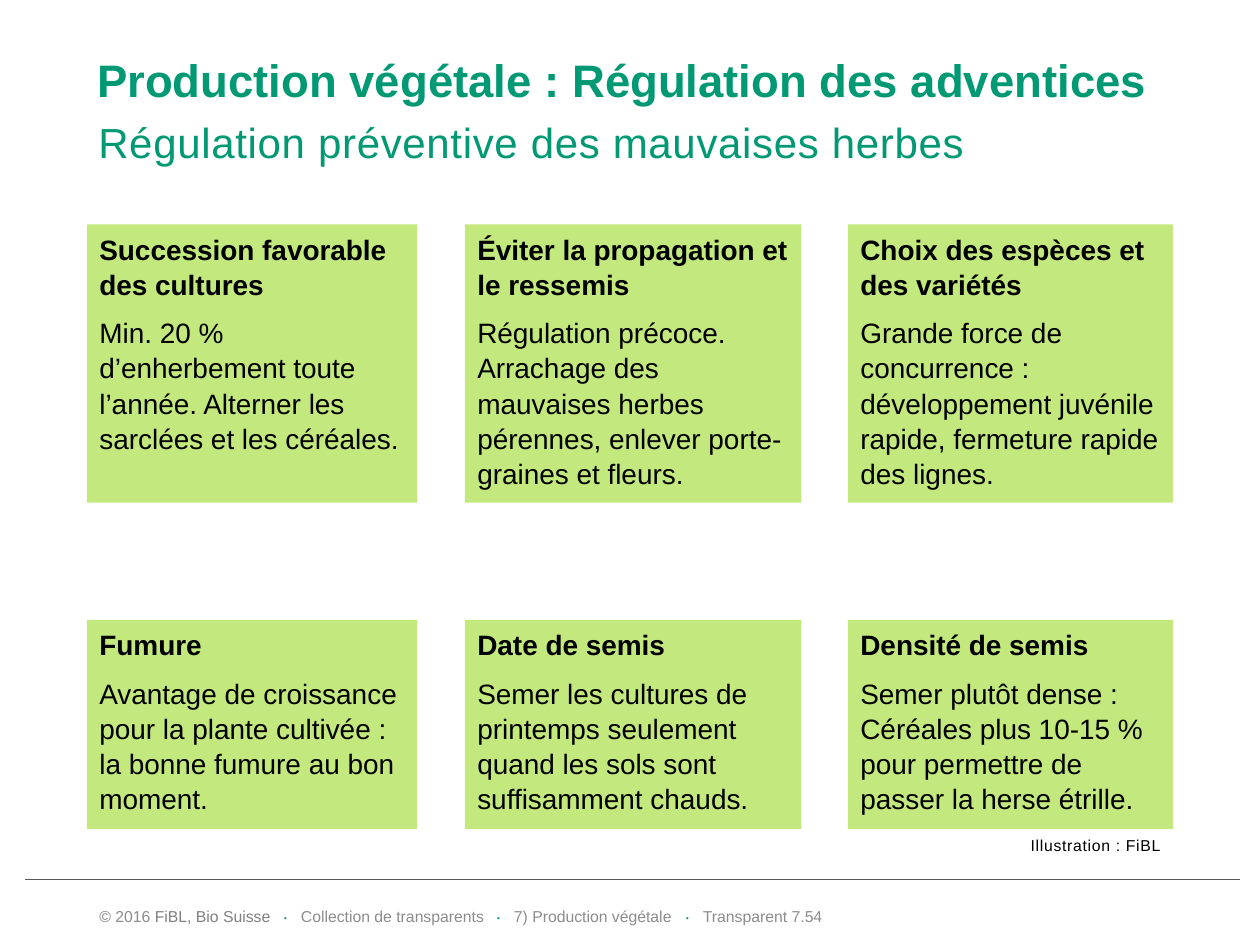
from lxml.etree import SubElement
from pptx import Presentation
from pptx.dml.color import RGBColor
from pptx.enum.shapes import MSO_CONNECTOR, MSO_SHAPE
from pptx.enum.text import MSO_ANCHOR as Anchor, MSO_AUTO_SIZE as AutoSize, PP_ALIGN as Align
from pptx.oxml.ns import qn
from pptx.util import Inches, Pt

GREEN, BLACK, GREY, LIGHT_GREY = "009973", "000000", "808080", "8C8C8C"
BOX_FILL, BULLET, RULE = "C2E87E", "008C7F", "595959"

# Columns: left, width
COLUMNS = [(0.69, 2.62), (3.69, 2.67), (6.73, 2.58)]
# Rows: top, height, cards from left to right
ROWS = [
    (1.78, 2.21, [
        ("Succession favorable des cultures",
         "Min. 20 % d’enherbement toute l’année. Alterner les sarclées et les céréales."),
        ("Éviter la propagation et le ressemis",
         "Régulation précoce. Arrachage des mauvaises herbes pérennes, "
         "enlever porte-graines et fleurs."),
        ("Choix des espèces et des variétés",
         "Grande force de concurrence : développement juvénile rapide, "
         "fermeture rapide des lignes."),
    ]),
    (4.92, 1.66, [
        ("Fumure",
         "Avantage de croissance pour la plante cultivée : la bonne fumure au bon moment."),
        ("Date de semis",
         "Semer les cultures de printemps seulement quand les sols sont suffisamment chauds."),
        ("Densité de semis",
         "Semer plutôt dense : Céréales plus 10-15 % pour permettre de passer la herse étrille."),
    ]),
]
# Footer sections after the copyright: text, tab position
SECTIONS = [("Collection de transparents", 1.6),
            ("7) Production végétale", 3.29),
            ("Transparent 7.54", 4.79)]
BULLET_GAP = 0.14


def colour(value):
    return RGBColor.from_string(value)


def style(font, size, value, bold=False, name="Arial"):
    font.size, font.bold, font.name = Pt(size), bold, name
    font.color.rgb = colour(value)


def fill_placeholder(shape, place, text, size, value, bold=False,
                     anchor=Anchor.TOP, align=Align.LEFT, line=1.0, spacing=0):
    """Move a placeholder and set its text; spacing is in hundredths of a point."""
    shape.left, shape.top, shape.width, shape.height = map(Inches, place)
    frame = shape.text_frame
    frame.text = text
    frame.auto_size, frame.vertical_anchor = AutoSize.NONE, anchor
    para = frame.paragraphs[0]
    para.alignment, para.line_spacing, para.space_before = align, line, Pt(0)
    span = para.runs[0]
    style(span.font, size, value, bold)
    span.font._element.set("spc", str(spacing))


def add_card(page, place, heading, body):
    box = page.shapes.add_shape(MSO_SHAPE.RECTANGLE, *map(Inches, place))
    box.shadow.inherit = False
    box.fill.solid()
    box.fill.fore_color.rgb = colour(BOX_FILL)
    box.line.fill.background()
    frame = box.text_frame
    frame.word_wrap, frame.vertical_anchor = True, Anchor.TOP
    frame.text = f"{heading}\n{body}"
    for index, para in enumerate(frame.paragraphs):
        para.alignment, para.line_spacing = Align.LEFT, 1.05
        para.space_before = Pt(7.5 * index)
        style(para.runs[0].font, 16, BLACK, bold=index == 0)


def add_rule(page):
    rule = page.shapes.add_connector(MSO_CONNECTOR.STRAIGHT, Inches(0.2), Inches(6.98),
                                     Inches(9.84), Inches(6.98))
    rule.line.color.rgb = colour(RULE)
    rule.line.width = Pt(0.5)
    SubElement(rule._element.spPr, qn("a:effectLst"))


def add_span(para, text, size, value, name="Arial"):
    span = para.add_run()
    span.text = text
    style(span.font, size, value, name=name)


def add_footer(page):
    box = page.shapes.add_textbox(Inches(0.69), Inches(7.04), Inches(6.91), Inches(0.46))
    frame = box.text_frame
    frame.word_wrap, frame.vertical_anchor = True, Anchor.MIDDLE
    para = frame.paragraphs[0]
    tabs = SubElement(para._p.get_or_add_pPr(), qn("a:tabLst"))
    for _, stop in SECTIONS:
        for position in (stop - BULLET_GAP, stop):
            SubElement(tabs, qn("a:tab"), pos=str(Inches(position)), algn="l")
    add_span(para, "© ", 9, GREY)
    add_span(para, "2016 ", 9, LIGHT_GREY)
    add_span(para, "FiBL, Bio Suisse", 9, GREY)
    for text, _ in SECTIONS:
        add_span(para, "\t•", 8, BULLET, "Montserrat")
        add_span(para, f"\t{text}", 9, LIGHT_GREY)


def main():
    deck = Presentation()
    deck.slide_width, deck.slide_height = Inches(10), Inches(7.5)
    page = deck.slides.add_slide(deck.slide_layouts.get_by_name("Comparison"))
    holders = {shape.placeholder_format.idx: shape for shape in page.placeholders}
    fill_placeholder(holders.pop(0), (0.67, 0.4, 8.64, 0.52),
                     "Production végétale : Régulation des adventices",
                     26, GREEN, bold=True, anchor=Anchor.MIDDLE, line=0.9)
    fill_placeholder(holders.pop(1), (0.68, 0.92, 8.63, 0.49),
                     "Régulation préventive des mauvaises herbes",
                     24, GREEN, line=0.9, spacing=40)
    fill_placeholder(holders.pop(3), (0.69, 6.58, 8.62, 0.31),
                     "Illustration : FiBL", 9, BLACK, align=Align.RIGHT, spacing=40)
    for unused in holders.values():
        unused._element.getparent().remove(unused._element)

    for top, height, cards in ROWS:
        for (left, width), (heading, body) in zip(COLUMNS, cards):
            add_card(page, (left, top, width, height), heading, body)
    add_rule(page)
    add_footer(page)
    deck.save("out.pptx")


if __name__ == "__main__":
    main()
